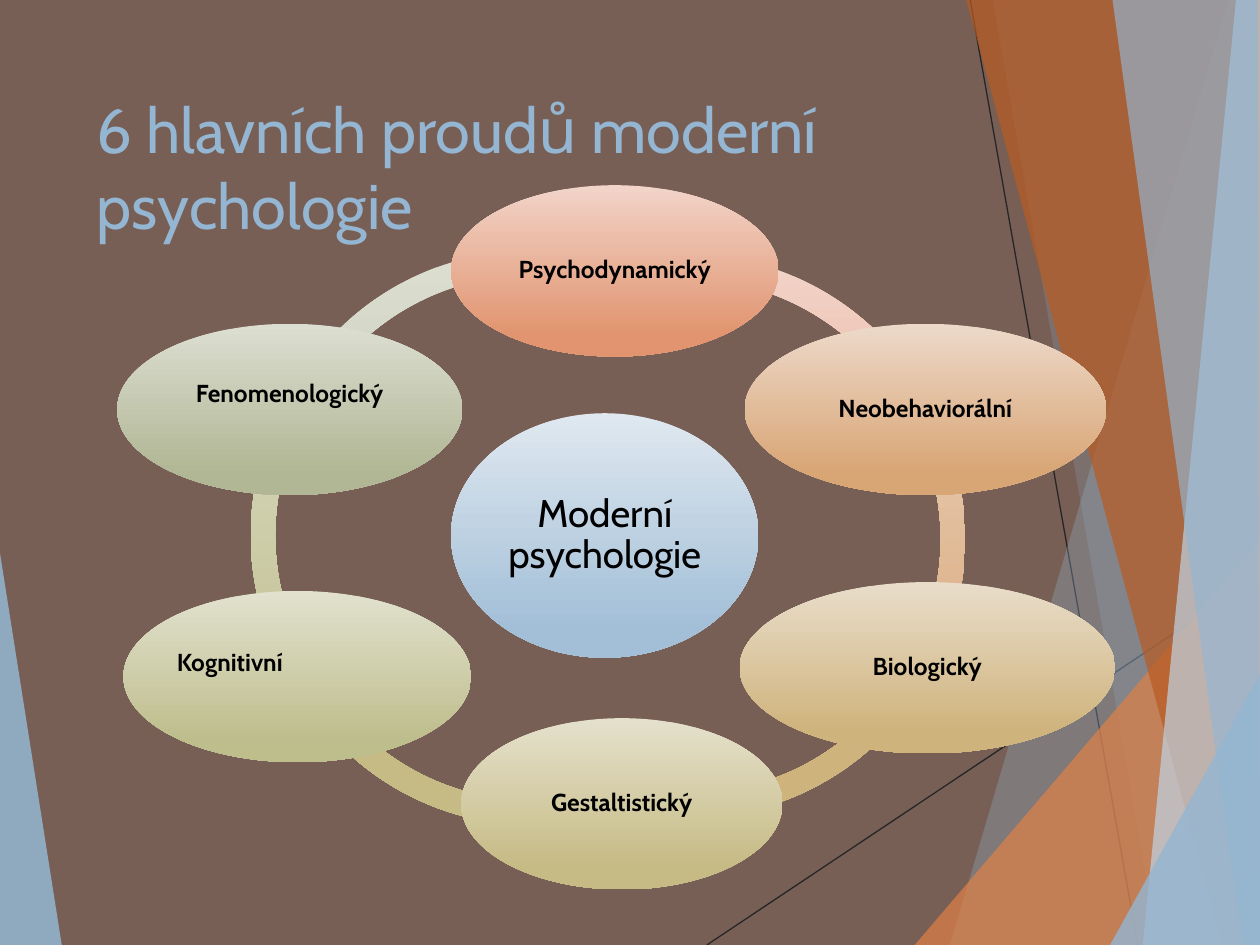
from lxml import etree
from pptx import Presentation
from pptx.dml.color import RGBColor
from pptx.enum.shapes import MSO_CONNECTOR, MSO_SHAPE
from pptx.enum.text import MSO_ANCHOR, PP_ALIGN
from pptx.oxml.ns import qn
from pptx.util import Inches, Pt

ELLIPSE, BLOCK_ARC = MSO_SHAPE.OVAL, MSO_SHAPE.BLOCK_ARC
LEFT, CENTER = PP_ALIGN.LEFT, PP_ALIGN.CENTER
TOP, MIDDLE = MSO_ANCHOR.TOP, MSO_ANCHOR.MIDDLE
STRAIGHT = MSO_CONNECTOR.STRAIGHT

FONT = "Cabin"
WIDTH, HEIGHT = 10, 7.5
BROWN, BLUE, BLACK, DARK = "775F55", "94B6D2", "000000", "262626"

DECOR_LINES = [((5.61, 7.5), (10, 4.57)), ((7.7, 0), (9.03, 7.5))]
# colour, opacity in percent, corner points
DECOR_PANELS = [
    (BLUE, 85, [(0, 4.39), (0.49, 7.5), (0, 7.5)]),
    (BLUE, 30, [(9.75, 0), (7.54, 7.5), (10, 7.5), (10, 0)]),
    (BLUE, 20, [(7.88, 0), (9.19, 7.5), (10, 7.5), (10, 0)]),
    ("DD8047", 72, [(7.26, 7.5), (10, 4.29), (10, 7.5)]),
    ("B95B22", 70, [(7.67, 0), (9.7, 7.5), (10, 7.5), (10, 0)]),
    ("BFD3E4", 70, [(9.81, 0), (9.07, 7.5), (10, 7.5), (10, 0)]),
    (BLUE, 65, [(8.83, 0), (9.86, 7.5), (10, 7.5), (9.98, 0)]),
    (BLUE, 80, [(8.81, 7.5), (10, 5.35), (10, 7.5)]),
]

DIAGRAM_BOX = (0.93, 1.47, 7.92, 5.59)
NODE_HEIGHT = 1.36
ARC_SIZE, ARC_THICKNESS = 4.32, 0.045
HUB = ("Moderní psychologie", 2.65, 1.81, 2.44, 1.94, ("DFE8F0", "A3BFD7"))
# text, left, top, width, gradient, alignment, bottom inset,
# then left, top, start angle and end angle of the arc in the same colours
STREAMS = [
    ("Psychodynamický", 2.65, 0, 2.6, ("F2D4C9", "E1946F"), CENTER, 0.02,
     (2.36, 0.55, 254.33, 333.84)),
    ("Neobehaviorální", 4.98, 1.1, 2.87, ("EDD9C9", "D8A575"), CENTER, 0.02,
     (2.41, 0.65, 330.76, 28.73)),
    ("Biologický", 4.94, 3.15, 2.98, ("E9DDCA", "CFB37C"), CENTER, 0.02,
     (2.38, 0.7, 27.11, 104.76)),
    ("Gestaltistický", 2.73, 4.23, 2.55, ("E5E0CC", "C6BB84"), CENTER, 0.02,
     (1.14, 0.76, 70.4, 152.09)),
    ("Kognitivní", 0.05, 3.22, 2.76, ("E1E1CE", "BEBD8C"), LEFT, 0.23,
     (1.06, 0.62, 147.97, 208.43)),
    ("Fenomenologický", 0, 1.1, 2.74, ("DCDED1", "B1B694"), CENTER, 0.26,
     (1.12, 0.52, 205.21, 288.59)),
]


def rgb(value):
    return RGBColor.from_string(value)


def write_text(shape, text, size, color, align, anchor, insets, bold=False, spacing=1.0):
    """Fill a shape with one paragraph; insets are left, top, right, bottom."""
    frame = shape.text_frame
    frame.word_wrap = True
    frame.vertical_anchor = anchor
    (frame.margin_left, frame.margin_top,
     frame.margin_right, frame.margin_bottom) = map(Inches, insets)
    paragraph = frame.paragraphs[0]
    paragraph.alignment = align
    paragraph.line_spacing = spacing
    run = paragraph.add_run()
    run.text = text
    run.font.name = FONT
    run.font.size = Pt(size)
    run.font.bold = bold
    run.font.color.rgb = rgb(color)


def add_gradient_shape(slide, kind, box, colors):
    shape = slide.shapes.add_shape(kind, *map(Inches, box))
    shape.shadow.inherit = False
    shape.line.fill.background()
    shape.fill.gradient()
    shape.fill.gradient_angle = 270
    for stop, color, position in zip(shape.fill.gradient_stops, colors, (0, 0.88)):
        stop.color.rgb = rgb(color)
        stop.position = position
    return shape


def add_panel(slide, color, opacity, points):
    corners = [(Inches(x), Inches(y)) for x, y in points]
    builder = slide.shapes.build_freeform(*corners[0])
    builder.add_line_segments(corners[1:], close=True)
    shape = builder.convert_to_shape()
    shape.shadow.inherit = False
    shape.line.fill.background()
    shape.fill.solid()
    shape.fill.fore_color.rgb = rgb(color)
    color_element = shape._element.spPr.find(qn("a:solidFill"))[0]
    etree.SubElement(color_element, qn("a:alpha")).set("val", str(opacity * 1000))


def add_decoration(slide):
    for start, end in DECOR_LINES:
        connector = slide.shapes.add_connector(STRAIGHT, *map(Inches, start + end))
        connector.line.color.rgb = rgb(DARK)
        connector.line.width = Pt(0.75)
        etree.SubElement(connector._element.spPr, qn("a:effectLst"))
    for color, opacity, points in DECOR_PANELS:
        add_panel(slide, color, opacity, points)


def add_title(slide, box):
    title = slide.shapes.add_textbox(*map(Inches, box))
    write_text(title, "6 hlavních proudů moderní psychologie", 36, BLUE,
               LEFT, TOP, (0.1, 0.05, 0.1, 0.05))


def add_diagram(slide, box):
    """Draw the ring of arcs, then the hub and the streams around it."""
    left, top = box[:2]
    for *_, colors, _, _, (x, y, start, end) in reversed(STREAMS):
        arc = add_gradient_shape(
            slide, BLOCK_ARC, (left + x, top + y, ARC_SIZE, ARC_SIZE), colors)
        # angles are stored in 60000ths of a degree, adjustments in 100000ths
        arc.adjustments[0] = start * 0.6
        arc.adjustments[1] = end * 0.6
        arc.adjustments[2] = ARC_THICKNESS

    text, x, y, width, height, colors = HUB
    hub = add_gradient_shape(slide, ELLIPSE, (left + x, top + y, width, height), colors)
    write_text(hub, text, 22, BLACK, CENTER, MIDDLE, (0.03,) * 4, spacing=0.9)

    for text, x, y, width, colors, align, bottom, _ in STREAMS:
        node = add_gradient_shape(
            slide, ELLIPSE, (left + x, top + y, width, NODE_HEIGHT), colors)
        write_text(node, text, 14, BLACK, align, MIDDLE,
                   (0.02, 0.02, 0.02, bottom), bold=True, spacing=0.9)


def main():
    presentation = Presentation()
    presentation.slide_width = Inches(WIDTH)
    presentation.slide_height = Inches(HEIGHT)
    slide = presentation.slides.add_slide(presentation.slide_layouts[6])
    slide.background.fill.solid()
    slide.background.fill.fore_color.rgb = rgb(BROWN)
    add_decoration(slide)
    add_title(slide, (0.67, 0.67, 6.94, 1.44))
    add_diagram(slide, DIAGRAM_BOX)
    presentation.save("out.pptx")


if __name__ == "__main__":
    main()
